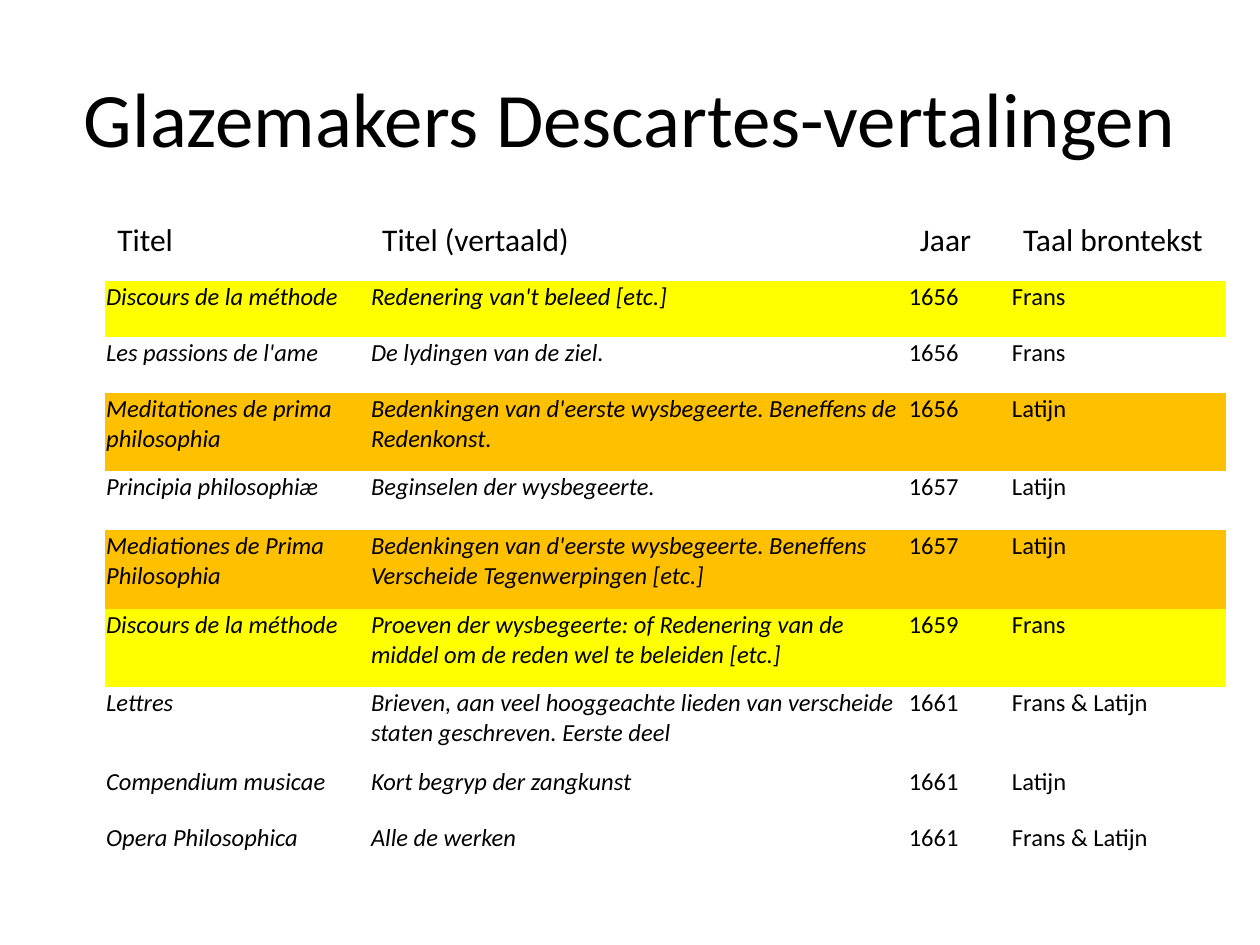
from pptx import Presentation
from pptx.dml.color import RGBColor
from pptx.enum import text
from pptx.oxml import ns
from pptx.util import Cm, Pt

BLACK = RGBColor(0x00, 0x00, 0x00)
YELLOW = RGBColor(0xFF, 0xFF, 0x00)
AMBER = RGBColor(0xFF, 0xC0, 0x00)
FACE = "Calibri"
PLAIN = "{2D5ABB26-0587-4C30-8999-92F81FD0307C}"  # No Style, No Grid

TITLE = "Glazemakers Descartes-vertalingen"
HEAD = ("Titel", "Titel (vertaald)", "Jaar", "Taal brontekst")
WIDTHS = (5.34, 10.84, 2.08, 4.34)
HEAD_H = 1.32
# row height, row colour, cell texts
WORKS = [
    (1.13, YELLOW, ("Discours de la méthode", "Redenering van't beleed [etc.]", "1656", "Frans")),
    (1.13, None, ("Les passions de l'ame", "De lydingen van de ziel.", "1656", "Frans")),
    (1.58, AMBER, ("Meditationes de prima philosophia",
                   "Bedenkingen van d'eerste wysbegeerte. Beneffens de Redenkonst.",
                   "1656", "Latijn")),
    (1.19, None, ("Principia philosophiæ", "Beginselen der wysbegeerte.", "1657", "Latijn")),
    (1.58, AMBER, ("Mediationes de Prima Philosophia",
                   "Bedenkingen van d'eerste wysbegeerte. Beneffens Verscheide Tegenwerpingen [etc.]",
                   "1657", "Latijn")),
    (1.58, YELLOW, ("Discours de la méthode",
                    "Proeven der wysbegeerte: of Redenering van de middel om de reden wel te beleiden [etc.]",
                    "1659", "Frans")),
    (1.58, None, ("Lettres",
                  "Brieven, aan veel hooggeachte lieden van verscheide staten geschreven. Eerste deel",
                  "1661", "Frans & Latijn")),
    (1.13, None, ("Compendium musicae", "Kort begryp der zangkunst", "1661", "Latijn")),
    (1.13, None, ("Opera Philosophica", "Alle de werken", "1661", "Frans & Latijn")),
]


def style(para, size, italic=False):
    font = para.font
    font.name, font.size, font.italic = FACE, Pt(size), italic
    font.color.rgb = BLACK


def add_title(slide):
    title = slide.shapes.title
    title.left, title.top, title.width, title.height = Cm(1.27), Cm(0.76), Cm(22.86), Cm(3.18)
    title.text_frame.text = TITLE
    title.text_frame.vertical_anchor = text.MSO_ANCHOR.MIDDLE
    para = title.text_frame.paragraphs[0]
    para.alignment = text.PP_ALIGN.CENTER
    style(para, 44)


def fill_cell(cell, words, colour):
    cell.text = words
    if colour is None:
        cell.fill.background()
    else:
        cell.fill.solid()
        cell.fill.fore_color.rgb = colour


def add_works(slide):
    high = HEAD_H + sum(work[0] for work in WORKS)
    frame = slide.shapes.add_table(len(WORKS) + 1, len(HEAD), Cm(2.11), Cm(4.34),
                                   Cm(sum(WIDTHS)), Cm(high))
    table = frame.table
    table.first_row = table.horz_banding = False
    table._tbl.tblPr.find(ns.qn("a:tableStyleId")).text = PLAIN
    for col, width in zip(table.columns, WIDTHS):
        col.width = Cm(width)

    table.rows[0].height = Cm(HEAD_H)
    for cell, words in zip(table.rows[0].cells, HEAD):
        fill_cell(cell, words, None)
        style(cell.text_frame.paragraphs[0], 18)

    for r, (height, colour, texts) in enumerate(WORKS, 1):
        table.rows[r].height = Cm(height)
        for c, words in enumerate(texts):
            cell = table.cell(r, c)
            fill_cell(cell, words, colour)
            cell.margin_left = cell.margin_right = cell.margin_top = Cm(0.03)
            cell.margin_bottom = 0
            style(cell.text_frame.paragraphs[0], 14, italic=c < 2)


def main():
    deck = Presentation()
    deck.slide_width, deck.slide_height = Cm(25.4), Cm(19.05)
    slide = deck.slides.add_slide(deck.slide_layouts[5])
    add_title(slide)
    add_works(slide)
    deck.save("out.pptx")


if __name__ == "__main__":
    main()
